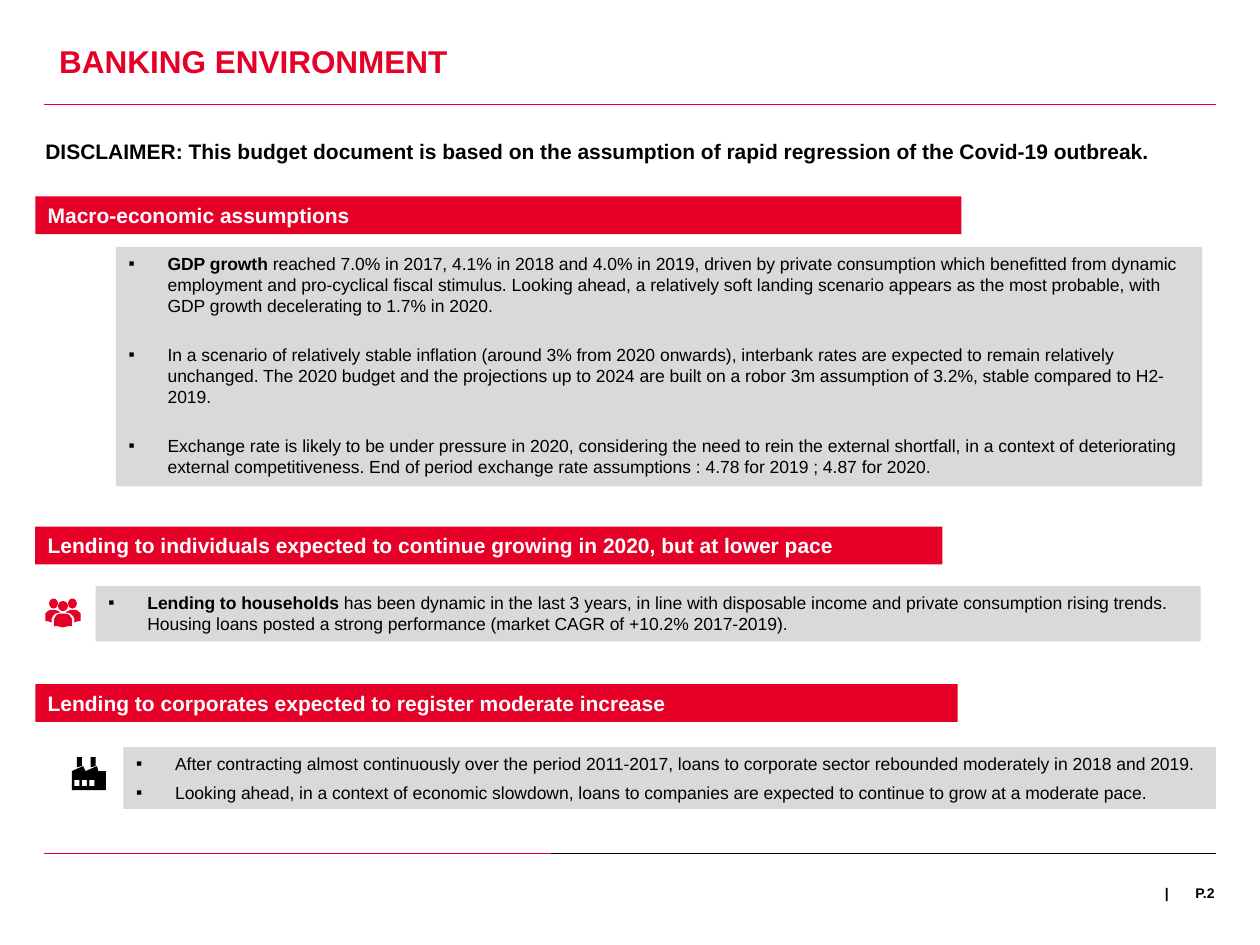
from lxml.etree import SubElement
from pptx import Presentation
from pptx.dml.color import RGBColor
from pptx.enum.shapes import MSO_CONNECTOR, MSO_SHAPE
from pptx.enum.text import MSO_ANCHOR as ANCHOR, MSO_AUTO_SIZE as AUTO, PP_ALIGN as ALIGN
from pptx.oxml.ns import qn
from pptx.util import Inches, Pt

COLORS = {"red": "E60028", "black": "000000", "white": "FFFFFF", "grey": "D9D9D9"}
MARGIN, RIGHT = 0.35, 9.65
INSETS = (0.1, 0.05, 0.1, 0.05)

SECTIONS = [  # heading, top, width
    ("Macro-economic assumptions", 1.56, 7.35),
    ("Lending to individuals expected to continue growing in 2020, but at lower pace",
     4.18, 7.2),
    ("Lending to corporates expected to register moderate increase", 5.43, 7.32),
]

LISTS = [  # placeholder index, box, space between items, (bold lead, text) items
    (2, (0.92, 1.96, 8.62, 1.9), 16, [
        ("GDP growth ",
         "reached 7.0% in 2017, 4.1% in 2018 and 4.0% in 2019, driven by private consumption "
         "which benefitted from dynamic employment and pro-cyclical fiscal stimulus. Looking "
         "ahead, a relatively soft landing scenario appears as the most probable, with GDP "
         "growth decelerating to 1.7% in 2020."),
        ("",
         "In a scenario of relatively stable inflation (around 3% from 2020 onwards), interbank "
         "rates are expected to remain relatively unchanged. The 2020 budget and the projections "
         "up to 2024 are built on a robor 3m assumption of 3.2%, stable compared to H2-2019."),
        ("",
         "Exchange rate is likely to be under pressure in 2020, considering the need to rein the "
         "external shortfall, in a context of deteriorating external competitiveness. End of "
         "period exchange rate assumptions : 4.78 for 2019 ; 4.87 for 2020."),
    ]),
    (4, (0.76, 4.65, 8.77, 0.44), 4, [
        ("Lending to households ",
         "has been dynamic in the last 3 years, in line with disposable income and private "
         "consumption rising trends. Housing loans posted a strong performance (market CAGR of "
         "+10.2% 2017-2019)."),
    ]),
    (3, (0.98, 5.93, 8.67, 0.49), 4, [
        ("",
         "After contracting almost continuously over the period 2011-2017, loans to corporate "
         "sector rebounded moderately in 2018 and 2019."),
        ("",
         "Looking ahead, in a context of economic slowdown, loans to companies are expected to "
         "continue to grow at a moderate pace."),
    ]),
]


def rgb(name):
    return RGBColor.from_string(COLORS[name])


def paint(shape, color):
    shape.fill.solid()
    shape.fill.fore_color.rgb = rgb(color)


def place(shape, box):
    shape.left, shape.top, shape.width, shape.height = map(Inches, box)


def set_frame(shape, insets=INSETS, wrap=True):
    left, top, right, bottom = map(Inches, insets)
    settings = {"margin_left": left, "margin_top": top, "margin_right": right,
                "margin_bottom": bottom, "word_wrap": wrap, "auto_size": AUTO.NONE,
                "vertical_anchor": ANCHOR.TOP}
    for name, value in settings.items():
        setattr(shape.text_frame, name, value)


def add_run(paragraph, text, size, color="black", bold=True):
    run = paragraph.add_run()
    run.text = text
    for name, value in {"name": "Arial", "size": Pt(size), "bold": bold}.items():
        setattr(run.font, name, value)
    run.font.color.rgb = rgb(color)


def write_line(shape, text, size, color="black", align=ALIGN.LEFT):
    paragraph = shape.text_frame.paragraphs[0]
    paragraph.alignment = align
    paragraph.space_before = Pt(0)
    add_run(paragraph, text, size, color)


def add_rule(slide, y, start, color):
    rule = slide.shapes.add_connector(
        MSO_CONNECTOR.STRAIGHT, Inches(RIGHT), Inches(y), Inches(start), Inches(y))
    rule.line.color.rgb = rgb(color)
    rule.line.width = Pt(0.5)
    SubElement(rule._element.spPr, qn("a:effectLst"))


def add_preset(slide, kind, box, color):
    shape = slide.shapes.add_shape(kind, *map(Inches, box))
    shape.shadow.inherit = False
    paint(shape, color)
    shape.line.fill.background()
    return shape


def add_heading(slide, text, top, width):
    bar = add_preset(slide, MSO_SHAPE.RECTANGLE, (0.28, top, width, 0.3), "red")
    set_frame(bar)
    write_line(bar, text, 12, "white")


def add_label(slide, text, box, align, wrap):
    label = slide.shapes.add_textbox(*map(Inches, box))
    set_frame(label, (0, 0, 0, 0), wrap)
    write_line(label, text, 8, align=align)


def set_bullet(paragraph):
    props = paragraph._p.get_or_add_pPr()
    props.set("marL", str(Inches(0.31)))
    props.set("indent", str(-Inches(0.31)))
    SubElement(props, qn("a:buFont")).set("typeface", "Arial")
    SubElement(props, qn("a:buChar")).set("char", "▪")


def fill_list(panel, box, gap, items):
    place(panel, box)
    paint(panel, "grey")
    set_frame(panel)
    for number, (lead, text) in enumerate(items):
        frame = panel.text_frame
        paragraph = frame.add_paragraph() if number else frame.paragraphs[0]
        paragraph.space_before = Pt(gap if number else 0)
        set_bullet(paragraph)
        if lead:
            add_run(paragraph, lead, 10)
        add_run(paragraph, text, 10, bold=False)


def add_outline(slide, contours, color):
    contours = [[(Inches(x), Inches(y)) for x, y in contour] for contour in contours]
    builder = slide.shapes.build_freeform(*contours[0][0])
    for number, contour in enumerate(contours):
        if number:
            builder.move_to(*contour[0])
        builder.add_line_segments(contour[1:], close=True)
    outline = builder.convert_to_shape()
    outline.shadow.inherit = False
    paint(outline, color)
    outline.line.fill.background()


def add_people(slide):
    side = [(0.44, 4.87), (0.48, 4.86), (0.46, 4.85), (0.44, 4.84), (0.4, 4.84), (0.38, 4.85),
            (0.36, 4.87), (0.36, 4.93), (0.38, 4.93), (0.41, 4.94), (0.41, 4.91), (0.42, 4.89)]
    middle = [(0.5, 4.87), (0.47, 4.87), (0.45, 4.88), (0.43, 4.91), (0.43, 4.97),
              (0.46, 4.97), (0.5, 4.98)]

    def mirror(points):
        return [(1 - x, y) for x, y in points]

    for body in (side, mirror(side), middle + mirror(middle)[::-1]):
        add_outline(slide, [body], "red")
    for head in ((0.39, 4.75, 0.07, 0.08), (0.54, 4.75, 0.07, 0.08), (0.46, 4.77, 0.08, 0.08)):
        add_preset(slide, MSO_SHAPE.OVAL, head, "red")


def add_factory(slide):
    for x in (0.61, 0.72):  # chimneys
        add_outline(slide, [[(x + 0.04, 6.01), (x, 6.01), (x, 6.09), (x + 0.04, 6.08)]], "black")
    hall = [(0.84, 6.27), (0.84, 6.12), (0.78, 6.12), (0.77, 6.08), (0.68, 6.12),
            (0.66, 6.08), (0.57, 6.12), (0.57, 6.27)]
    windows = [[(x, 6.19), (x, 6.24), (x + 0.04, 6.24), (x + 0.04, 6.19)]
               for x in (0.59, 0.65, 0.71)]
    add_outline(slide, [hall] + windows, "black")


def main():
    deck = Presentation()
    deck.slide_width, deck.slide_height = Inches(10), Inches(7.5)
    slide = deck.slides.add_slide(deck.slide_layouts[4])
    holders = slide.placeholders

    # Title and disclaimer
    place(slide.shapes.title, (0.43, 0.33, 7.41, 0.3))
    set_frame(slide.shapes.title, (0.04, 0, 0.04, 0))
    write_line(slide.shapes.title, "BANKING ENVIRONMENT", 18, "red")
    place(holders[1], (0.26, 1.05, 9.26, 0.3))
    set_frame(holders[1])
    write_line(holders[1], "DISCLAIMER: This budget document is based on the assumption of "
               "rapid regression of the Covid-19 outbreak.", 12)

    # Rules and page number
    for y, start, color in ((0.83, MARGIN, "red"), (6.77, MARGIN, "red"), (6.77, 4.37, "black")):
        add_rule(slide, y, start, color)
    add_label(slide, "|", (9.22, 7.02, 0.08, 0.48), ALIGN.CENTER, False)
    add_label(slide, "P.2", (9.25, 7.02, 0.39, 0.48), ALIGN.RIGHT, True)

    # Sections
    for heading in SECTIONS:
        add_heading(slide, *heading)
    for index, box, gap, items in LISTS:
        fill_list(holders[index], box, gap, items)

    # Icons
    add_people(slide)
    add_factory(slide)

    deck.save("out.pptx")


if __name__ == "__main__":
    main()
